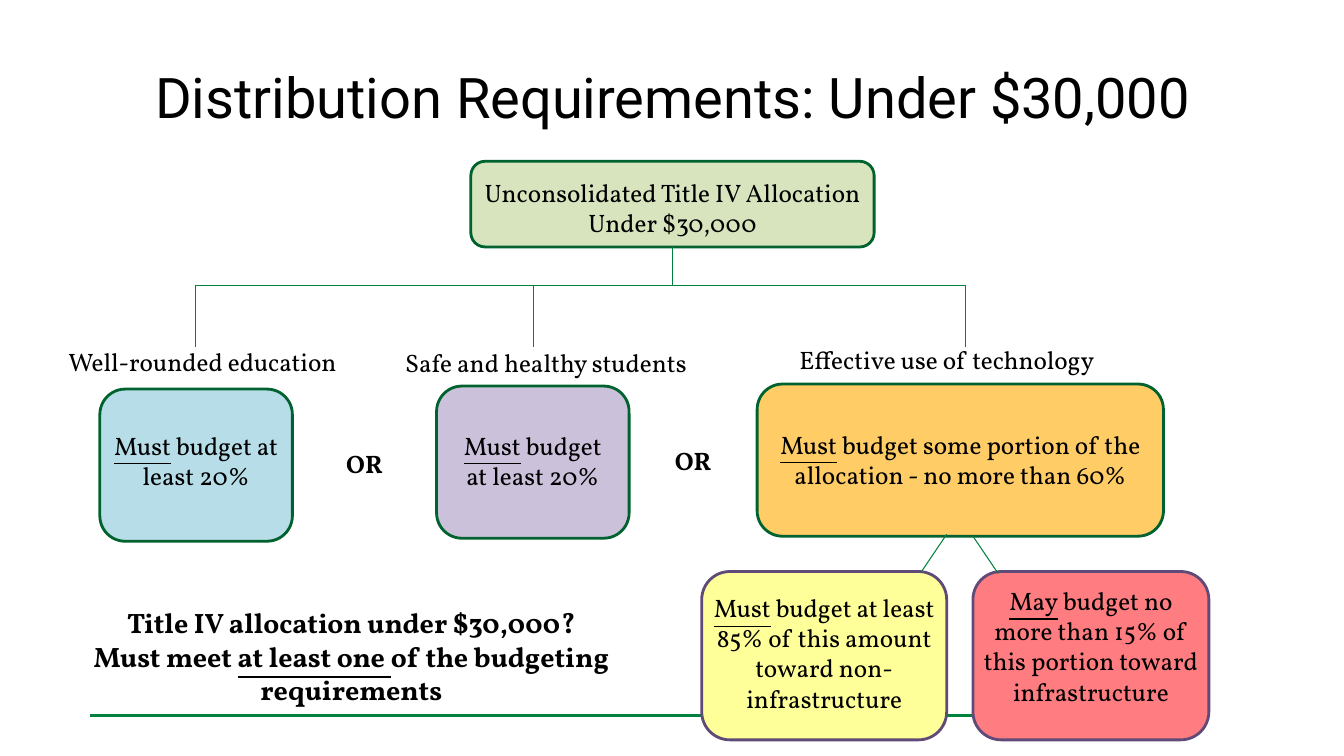
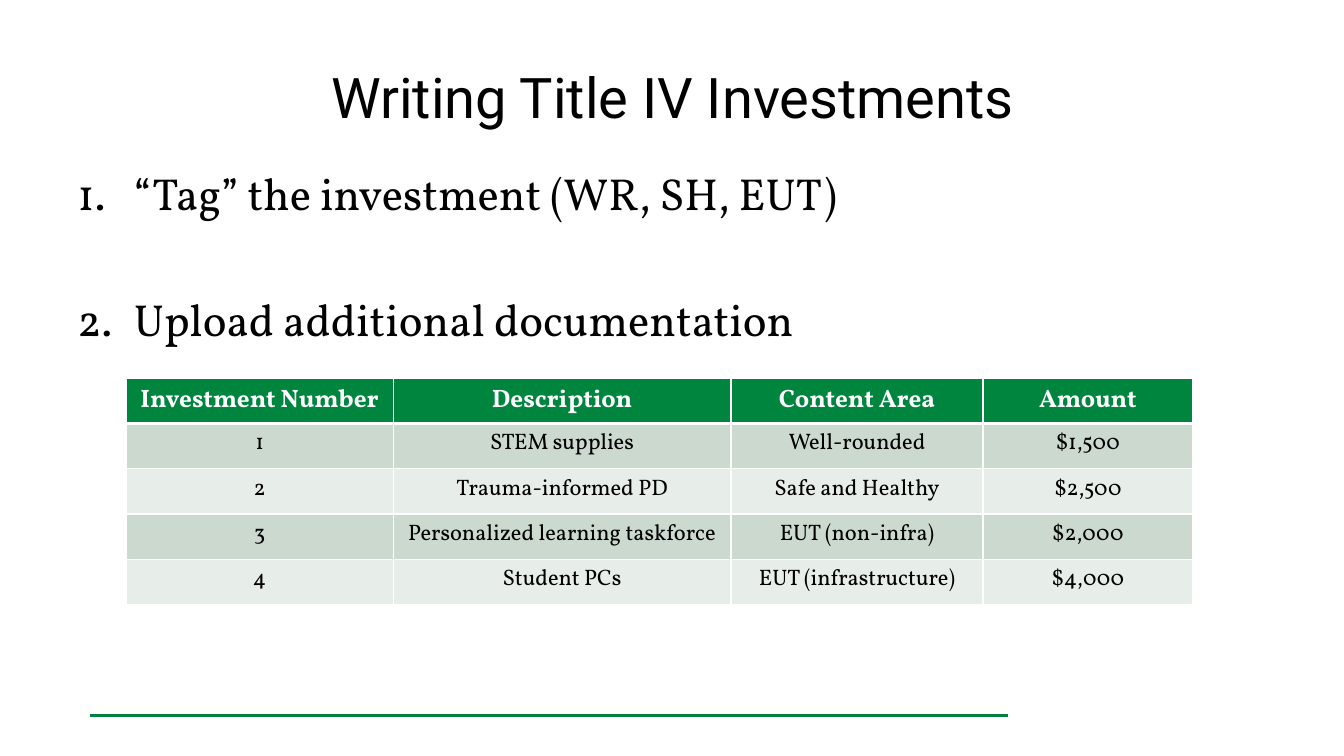
from lxml.etree import SubElement
from pptx import Presentation
from pptx.dml.color import RGBColor
from pptx.enum.shapes import MSO_CONNECTOR, MSO_SHAPE
from pptx.enum.text import MSO_ANCHOR, PP_ALIGN
from pptx.oxml.ns import qn
from pptx.util import Emu, Pt

UNIT = 9144
HUES = {
    "ink": "000000", "white": "FFFFFF", "line": "00823E", "edge": "00622F",
    "plum": "5F4A78", "lime": "D7E4BD", "blue": "B7DEE8", "lilac": "CCC1DA",
    "gold": "FFCC66", "lemon": "FFFF99", "red": "FF7C80",
    "head": "00853F", "odd": "CCD9CF", "even": "E7EDE8",
}
TITLE = {"name": "Roboto", "size": Pt(40)}
BASE = {"name": "Vollkorn", "size": Pt(18)}
BOLD = {**BASE, "bold": True}
NOTE = {**BOLD, "size": Pt(20)}
CELL = {**BASE, "size": Pt(16), "bold": False}
LIST = {**BASE, "size": Pt(32)}
MID = {"alignment": PP_ALIGN.CENTER}
LEFT = {"alignment": PP_ALIGN.LEFT}


def px(*nums):
    """Turn px lengths into EMU."""
    return [Emu(num * UNIT) for num in nums]


def rgb(hue):
    """Look up a named colour."""
    return RGBColor.from_string(HUES[hue])


def apply(item, form):
    """Set each format value on an item."""
    for key, val in form.items():
        setattr(item, key, val)


def write(frame, lines, font=BASE, para=MID, hue="ink"):
    """Fill a frame with lines; words between underscores are underlined."""
    for row, line in enumerate(lines):
        part = frame.add_paragraph() if row else frame.paragraphs[0]
        apply(part, para)
        for spot, words in enumerate(line.split("_")):
            if words:
                run = part.add_run()
                run.text = words
                apply(run.font, font)
                run.font.underline = spot % 2 == 1
                run.font.color.rgb = rgb(hue)


def label(slide, box, lines, font=BASE, para=MID, anchor=MSO_ANCHOR.TOP):
    """Add a wrapped text box."""
    frame = slide.shapes.add_textbox(*px(*box)).text_frame
    apply(frame, {"word_wrap": True, "vertical_anchor": anchor})
    write(frame, lines, font, para)
    return frame


def node(slide, box, lines, fill, edge="edge", side=10, shift=0):
    """Add a rounded box whose text sits shift px off its middle."""
    shape = slide.shapes.add_shape(MSO_SHAPE.FLOWCHART_ALTERNATE_PROCESS, *px(*box))
    shape.shadow.inherit = False
    shape.fill.solid()
    shape.fill.fore_color.rgb = rgb(fill)
    shape.line.color.rgb = rgb(edge)
    shape.line.width = Pt(2)
    left, top, low = px(side, max(0, 2 * shift), max(0, -2 * shift))
    apply(shape.text_frame, {
        "word_wrap": True, "vertical_anchor": MSO_ANCHOR.MIDDLE,
        "margin_left": left, "margin_right": left,
        "margin_top": top, "margin_bottom": low,
    })
    write(shape.text_frame, lines)
    return shape


def rule(slide, ends, width=0.75):
    """Draw a straight green line."""
    line = slide.shapes.add_connector(MSO_CONNECTOR.STRAIGHT, *px(*ends))
    line.line.color.rgb = rgb("line")
    line.line.width = Pt(width)
    SubElement(line._element.spPr, qn("a:effectLst"))
    return line


def start(deck, title):
    """Add a slide with the shared footer rule and title."""
    slide = deck.slides.add_slide(deck.slide_layouts[6])
    rule(slide, (89, 710, 1000, 710), 2.25)
    label(slide, (67, 33, 1200, 125), [title], TITLE, anchor=MSO_ANCHOR.MIDDLE)
    return slide


def tree(slide, box):
    """Draw the allocation tree within a box."""
    x, y, wide, high = box
    root = node(slide, (x + 409, y, 400, 85),
                ["Unconsolidated Title IV Allocation", "Under $30,000"],
                "lime", side=0, shift=3)
    bar = y + 123
    stem = rule(slide, (x + 609, y + 85, x + 609, bar))
    stem.begin_connect(root, 2)
    drops = (136, 471, 900)
    rule(slide, (x + drops[0], bar, x + drops[-1], bar))
    for drop in drops:
        rule(slide, (x + drop, bar, x + drop, bar + 61))
    for left, top, name in (
        (0, 179, "Well-rounded education"),
        (334, 180, "Safe and healthy students"),
        (725, 177, "Effective use of technology"),
    ):
        label(slide, (x + left, y + top, 350, 40), [name], para=LEFT)
    least = "_Must_ budget at least 20%"
    some = "_Must_ budget some portion of the allocation - no more than 60%"
    for left, top, span, text, fill, side, shift in (
        (41, 226, 191, least, "blue", 6, -5),
        (375, 223, 191, least, "lilac", 10, -2),
        (693, 221, 403, some, "gold", 10, -1),
    ):
        node(slide, (x + left, y + top, span, 151), [text], fill, side=side, shift=shift)
    for left, top in ((258, 280), (584, 277)):
        label(slide, (x + left, y + top, 91, 40), ["OR"], BOLD)
    for left, span, text, fill, shift in (
        (638, 243, "_Must_ budget at least 85% of this amount toward non-infrastructure",
         "lemon", -3),
        (wide - 234, 234, "_May_ budget no more than 15% of this portion toward infrastructure",
         "red", -10),
    ):
        node(slide, (x + left, y + high - 167, span, 167), [text], fill, "plum", 2, shift)
    for left, top, step in ((881, 370, -25), (907, 372, 25)):
        rule(slide, (x + left, y + top, x + left + step, y + top + 37))


def steps(slide, box, lines):
    """Write a numbered list."""
    frame = label(slide, box, lines, LIST, LEFT)
    for row, part in enumerate(frame.paragraphs):
        if row:
            part.space_before = Pt(52)
        prop = part._p.get_or_add_pPr()
        prop.set("marL", str(56 * UNIT))
        prop.set("indent", str(-56 * UNIT))
        SubElement(prop, qn("a:buFont"), typeface="Vollkorn")
        SubElement(prop, qn("a:buAutoNum"), type="arabicPeriod")


def border(cell, row):
    """Draw white cell borders, thicker under the header."""
    prop = cell._tc.get_or_add_tcPr()
    for side in "LRTB":
        thick = (row, side) in ((0, "B"), (1, "T"))
        line = SubElement(prop, qn("a:ln" + side), w=str(Pt(3 if thick else 1)))
        fill = SubElement(line, qn("a:solidFill"))
        SubElement(fill, qn("a:srgbClr"), val=HUES["white"])


def grid(slide, box, spans, rows):
    """Add the investment table."""
    table = slide.shapes.add_table(len(rows), len(spans), *px(*box)).table
    for col, span in zip(table.columns, px(*spans)):
        col.width = span
    for row, words in enumerate(rows):
        fill = ("odd" if row % 2 else "even") if row else "head"
        for col, word in enumerate(words):
            cell = table.cell(row, col)
            border(cell, row)
            cell.fill.solid()
            cell.fill.fore_color.rgb = rgb(fill)
            write(cell.text_frame, [word], CELL if row else BOLD,
                  hue="ink" if row else "white")


def main():
    """Build and save the deck."""
    deck = Presentation()
    deck.slide_width, deck.slide_height = px(1333, 750)

    slide = start(deck, "Distribution Requirements: Under $30,000")
    label(slide, (13, 596, 671, 111), [
        "Title IV allocation under $30,000?",
        "Must meet _at least one _of the budgeting requirements",
    ], NOTE)
    tree(slide, (58, 160, 1141, 574))

    slide = start(deck, "Writing Title IV Investments")
    steps(slide, (67, 159, 1200, 200), [
        "“Tag” the investment (WR, SH, EUT)",
        "Upload additional documentation",
    ])
    grid(slide, (125, 375, 1058, 225), (265, 335, 250, 208), [
        ("Investment Number", "Description", "Content Area", "Amount"),
        ("1", "STEM supplies", "Well-rounded", "$1,500"),
        ("2", "Trauma-informed PD", "Safe and Healthy", "$2,500"),
        ("3", "Personalized learning taskforce", "EUT (non-infra)", "$2,000"),
        ("4", "Student PCs", "EUT (infrastructure)", "$4,000"),
    ])
    deck.save("out.pptx")


if __name__ == "__main__":
    main()
